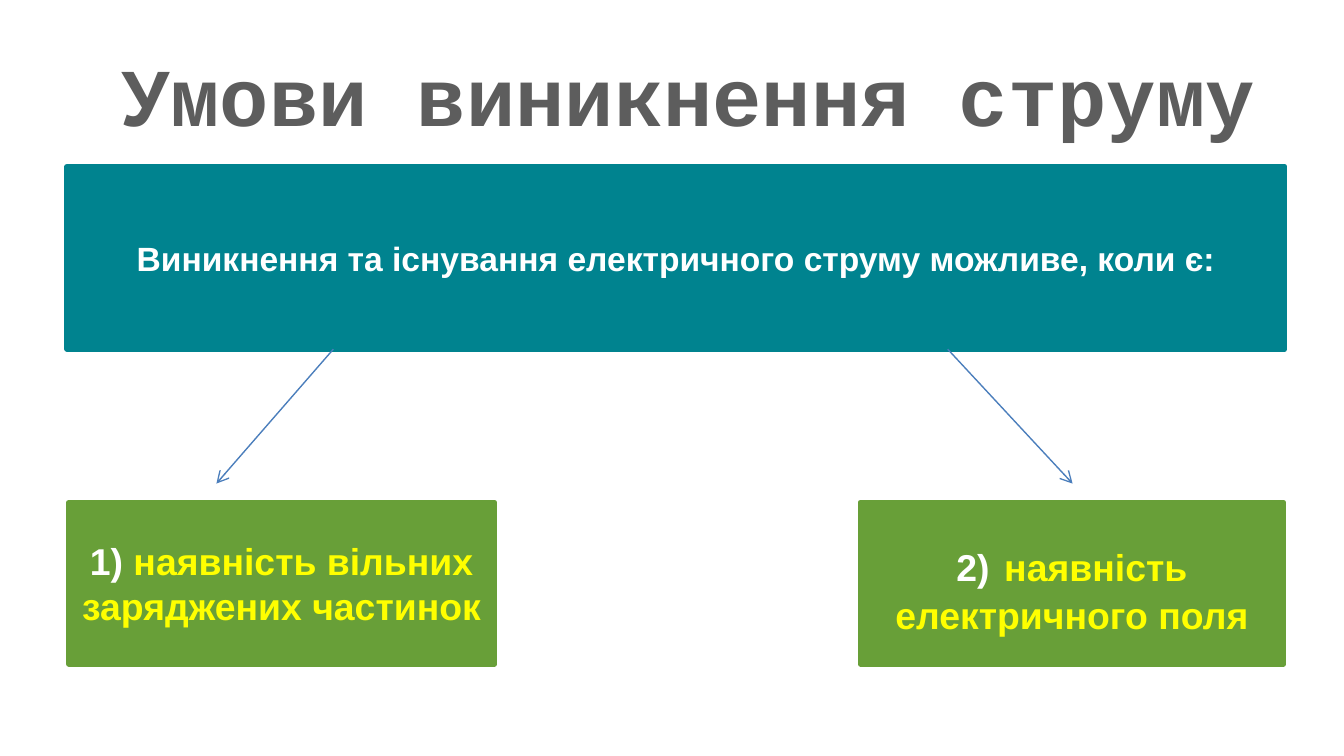
from dataclasses import dataclass

from lxml import etree
from pptx import Presentation
from pptx import util as u
from pptx.dml.color import RGBColor
from pptx.enum import shapes, text
from pptx.oxml.ns import qn

TEAL, GREEN, BLUE = "00838F", "689F38", "4B7EBC"
WHITE, YELLOW, GREY = "FFFFFF", "FFFF00", "5D5D5D"


@dataclass
class Phrase:
    wording: str
    size: float
    color: str = WHITE


@dataclass
class Box:
    left: float
    top: float
    width: float
    height: float
    fill: str
    phrases: list[Phrase]


@dataclass
class Arrow:
    start_x: float
    end_x: float
    start_y: float = 6.6
    end_y: float = 9.14


BOXES = [
    Box(1.27, 3.15, 23.01, 3.45, TEAL,
        [Phrase("Виникнення та існування електричного струму можливе, коли є:", 18)]),
    Box(1.3, 9.5, 8.05, 3.05, GREEN,
        [Phrase("1) ", 20), Phrase("наявність вільних заряджених частинок", 20, YELLOW)]),
    Box(16.26, 9.5, 8, 3.05, GREEN,
        [Phrase("2)", 20), Phrase(" ", 28), Phrase("наявність електричного поля", 20, YELLOW)]),
]
ARROWS = [Arrow(6.3, 4.09), Arrow(17.91, 20.27)]


def rgb(value: str) -> RGBColor:
    return RGBColor.from_string(value)


def write(shape, phrases: list[Phrase], font_name: str) -> None:
    """Fill a shape with one centred bold paragraph."""
    frame = shape.text_frame
    frame.word_wrap = True
    frame.auto_size = text.MSO_AUTO_SIZE.NONE
    frame.vertical_anchor = text.MSO_ANCHOR.MIDDLE
    paragraph = frame.paragraphs[0]
    paragraph.alignment = text.PP_ALIGN.CENTER
    for phrase in phrases:
        run = paragraph.add_run()
        run.text = phrase.wording
        run.font.name = font_name
        run.font.size = u.Pt(phrase.size)
        run.font.bold = True
        run.font.color.rgb = rgb(phrase.color)


def draw_title(slide, phrase: Phrase) -> None:
    title = slide.shapes.title
    title.left, title.top = u.Cm(1.9), u.Cm(0.58)
    title.width, title.height = u.Cm(22.23), u.Cm(2.39)
    write(title, [phrase], "Courier New")


def draw_box(slide, box: Box) -> None:
    shape = slide.shapes.add_shape(
        shapes.MSO_SHAPE.RECTANGLE,
        u.Cm(box.left), u.Cm(box.top), u.Cm(box.width), u.Cm(box.height))
    shape.shadow.inherit = False
    shape.fill.solid()
    shape.fill.fore_color.rgb = rgb(box.fill)
    shape.line.color.rgb = rgb(box.fill)
    shape.line.width = u.Pt(3)
    etree.SubElement(shape.element.spPr.find(qn("a:ln")), qn("a:round"))
    shape.text_frame.margin_left = shape.text_frame.margin_right = u.Cm(0.2)
    write(shape, box.phrases, "Arial")


def draw_arrow(slide, arrow: Arrow) -> None:
    connector = slide.shapes.add_connector(
        shapes.MSO_CONNECTOR.STRAIGHT,
        u.Cm(arrow.start_x), u.Cm(arrow.start_y), u.Cm(arrow.end_x), u.Cm(arrow.end_y))
    connector.line.color.rgb = rgb(BLUE)
    connector.line.width = u.Pt(0.75)
    properties = connector.element.spPr
    etree.SubElement(properties.find(qn("a:ln")), qn("a:tailEnd"), type="arrow")
    etree.SubElement(properties, qn("a:effectLst"))


def main() -> None:
    presentation = Presentation()
    presentation.slide_width, presentation.slide_height = u.Cm(25.4), u.Cm(14.29)
    slide = presentation.slides.add_slide(presentation.slide_layouts[5])

    # Heading
    draw_title(slide, Phrase("Умови виникнення струму", 44, GREY))

    # Statement and its two conditions
    for box in BOXES:
        draw_box(slide, box)

    # Arrows from the statement to the conditions
    for arrow in ARROWS:
        draw_arrow(slide, arrow)

    presentation.save("out.pptx")


if __name__ == "__main__":
    main()
